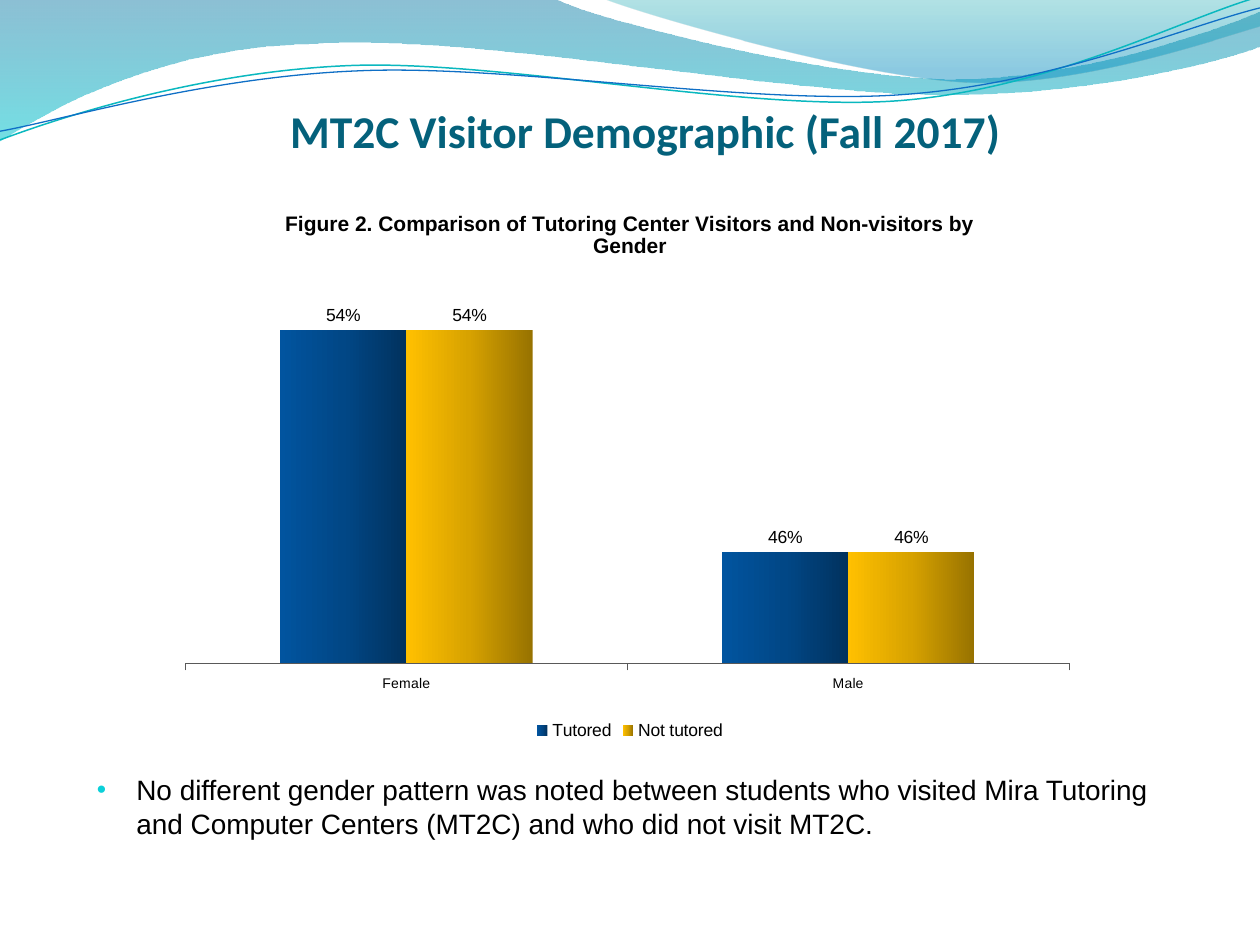
from dataclasses import dataclass

from pptx import Presentation
from pptx import util as u
from pptx.chart import data as cd
from pptx.dml import color as col
from pptx.enum import chart as ch, text
from pptx.oxml import parse_xml
from pptx.oxml import ns

Pt = u.Pt
RGB = col.RGBColor.from_string


@dataclass(frozen=True)
class Theme:
    title: str = "04617B"
    body: str = "000000"
    bullet: str = "0BD0D9"
    axis: str = "595959"
    teal_line: str = "0AB8BF"
    blue_line: str = "0F6FC6"
    wave_back: tuple = ((0, "0074A1", 45), (100, "00C6CF", 55))
    wave_front: tuple = ((0, "00A1A9", 30), (80, "008BBF", 45))
    tutored: tuple = ((0, "01325E", 100), (50, "014786", 100), (100, "01549F", 100))
    not_tutored: tuple = ((0, "977200", 100), (50, "D7A200", 100), (100, "FFC000", 100))
    head_font: str = "Calibri"
    body_font: str = "Arial"
    title_size: int = 26
    body_size: int = 16
    chart_title_size: int = 12
    chart_size: int = 10
    axis_size: int = 8


theme = Theme()


def set_gradient(fill, element, stops, angle):
    fill.gradient()
    fill.gradient_angle = angle
    gs_lst = next(element.iter(ns.qn("a:gsLst")))
    for gs in list(gs_lst):
        gs_lst.remove(gs)
    for pos, rgb, alpha in stops:
        opacity = f'<a:alpha val="{alpha * 1000}"/>' if alpha < 100 else ""
        gs_lst.append(parse_xml(
            f'<a:gs {ns.nsdecls("a")} pos="{pos * 1000}">'
            f'<a:srgbClr val="{rgb}">{opacity}</a:srgbClr></a:gs>'))


def add_curve(s, start, segments, close):
    points = [(Pt(x), Pt(y)) for seg in segments for x, y in seg]
    fb = s.shapes.build_freeform(Pt(start[0]), Pt(start[1]))
    fb.add_line_segments(points, close=close)
    sp = fb.convert_to_shape()
    sp.shadow.inherit = False
    lines = iter(list(sp._element.iter(ns.qn("a:lnTo"))))
    for seg in segments:
        group = [next(lines) for _ in seg]
        if len(group) == 3:
            bezier = parse_xml(f'<a:cubicBezTo {ns.nsdecls("a")}/>')
            group[0].addprevious(bezier)
            for line in group:
                bezier.append(line[0])
                line.getparent().remove(line)
    return sp


prs = Presentation()
prs.slide_width, prs.slide_height = Pt(720), Pt(540)
s = prs.slides.add_slide(prs.slide_layouts[6])

waves = [
    ((0, 0), [
        [(317, -1)],
        [(343, 12), (478, 45), (546, 45)],
        [(614, 45), (690, 19), (720, 6.5)],
        [(721, 26)],
        [(708, 32), (626, 55), (537, 54)],
        [(447, 54), (275, 20), (185, 24.5)],
        [(93, 26), (33, 60), (-0.7, 81)],
    ], theme.wave_back),
    ((345, -0.7), [
        [(366, 8), (491, 44.5), (553.5, 47)],
        [(616, 49.5), (692, 23), (720, 15)],
        [(720, 0)],
    ], theme.wave_front),
]
for start, segments, stops in waves:
    sp = add_curve(s, start, segments, True)
    set_gradient(sp.fill, sp._element, stops, 270)
    sp.line.fill.background()

strands = [
    ((-1.4, 63), [
        [(33.7, 51.7), (114.3, 29.4), (199.9, 30)],
        [(284.9, 30.5), (425.8, 67.2), (512.5, 64.8)],
        [(599.2, 62.3), (676.1, 25.9), (720.1, 15.4)],
    ], theme.teal_line, 0.85),
    ((-1.1, 58), [
        [(33.2, 53.6), (118.2, 32.6), (204.3, 33.2)],
        [(290.4, 33.2), (429.1, 63.8), (515.3, 61.4)],
        [(601.5, 59.4), (678.4, 30), (721.4, 21.5)],
    ], theme.blue_line, 0.75),
]
for start, segments, rgb, width in strands:
    sp = add_curve(s, start, segments, False)
    sp.rotation = 357.3
    sp.fill.background()
    sp.line.color.rgb = RGB(rgb)
    sp.line.width = Pt(width)

title = s.shapes.add_textbox(Pt(54), Pt(48), Pt(630), Pt(42))
tf = title.text_frame
tf.word_wrap = True
tf.vertical_anchor = text.MSO_ANCHOR.BOTTOM
tf.margin_left = tf.margin_right = tf.margin_bottom = 0
p = tf.paragraphs[0]
p.text = "MT2C Visitor Demographic (Fall 2017)"
p.alignment = text.PP_ALIGN.CENTER
p.font.name, p.font.size, p.font.bold = theme.head_font, Pt(theme.title_size), True
p.font.color.rgb = RGB(theme.title)

body = s.shapes.add_textbox(Pt(54), Pt(438), Pt(618), Pt(54))
tf = body.text_frame
tf.word_wrap = True
tf.margin_left = tf.margin_right = Pt(1.44)
p = tf.paragraphs[0]
p.text = ("No different gender pattern was noted between students who visited Mira Tutoring "
          "and Computer Centers (MT2C) and who did not visit MT2C.")
p.space_before = Pt(3.2)
p.font.name, p.font.size = theme.body_font, Pt(theme.body_size)
p.font.color.rgb = RGB(theme.body)
pPr = p._p.get_or_add_pPr()
pPr.set("marL", str(Pt(22.5)))
pPr.set("indent", str(Pt(-22.5)))
bullet = [f'<a:buClr {ns.nsdecls("a")}><a:srgbClr val="{theme.bullet}"/></a:buClr>',
          f'<a:buSzPct {ns.nsdecls("a")} val="95000"/>',
          f'<a:buFont {ns.nsdecls("a")} typeface="{theme.body_font}"/>',
          f'<a:buChar {ns.nsdecls("a")} char="•"/>']
spacing = pPr.find(ns.qn("a:spcBef"))
for xml in reversed(bullet):
    spacing.addnext(parse_xml(xml))

data = cd.CategoryChartData(number_format="0%")
data.categories = ["Female", "Male"]
data.add_series("Tutored", [0.54, 0.46])
data.add_series("Not tutored", [0.54, 0.46])
chart_w, chart_h = 516, 318
chart = s.shapes.add_chart(ch.XL_CHART_TYPE.COLUMN_CLUSTERED,
                           Pt(102), Pt(108), Pt(chart_w), Pt(chart_h), data).chart
chart.font.name, chart.font.size = theme.body_font, Pt(theme.chart_size)
chart.font.color.rgb = RGB(theme.body)

chart.has_title = True
chart.chart_title.include_in_layout = False
p = chart.chart_title.text_frame.paragraphs[0]
p.text = "Figure 2. Comparison of Tutoring Center Visitors and Non-visitors by Gender"
p.font.name, p.font.size, p.font.bold = theme.body_font, Pt(theme.chart_title_size), True
p.font.color.rgb = RGB(theme.body)

chart.has_legend = True
chart.legend.position = ch.XL_LEGEND_POSITION.BOTTOM
chart.legend.include_in_layout = False

axis = chart.category_axis
axis.major_tick_mark = ch.XL_TICK_MARK.OUTSIDE
axis.tick_labels.font.size = Pt(theme.axis_size)
axis.format.line.color.rgb = RGB(theme.axis)
axis.format.line.width = Pt(0.25)
axis = chart.value_axis
axis.minimum_scale, axis.maximum_scale = 0.42, 0.56
axis.has_major_gridlines = False
axis.visible = False

plot = chart.plots[0]
plot.gap_width, plot.overlap, plot.vary_by_categories = 150, 0, False
for series, stops in zip(plot.series, (theme.tutored, theme.not_tutored)):
    set_gradient(series.format.fill, series._element, stops, 180)
    labels = series.data_labels
    labels.show_value = True
    labels.position = ch.XL_LABEL_POSITION.OUTSIDE_END
    labels.number_format, labels.number_format_is_linked = "0%", False

area = next(chart._chartSpace.iter(ns.qn("c:plotArea")))
for old in area.findall(ns.qn("c:layout")):
    area.remove(old)
box = "".join(f'<c:{k} val="{v}"/>' for k, v in (
    ("layoutTarget", "inner"), ("xMode", "edge"), ("yMode", "edge"),
    ("x", 4 / chart_w), ("y", 49 / chart_h), ("w", 505 / chart_w), ("h", 222 / chart_h)))
area.insert(0, parse_xml(
    f'<c:layout {ns.nsdecls("c")}><c:manualLayout>{box}</c:manualLayout></c:layout>'))

prs.save("out.pptx")
